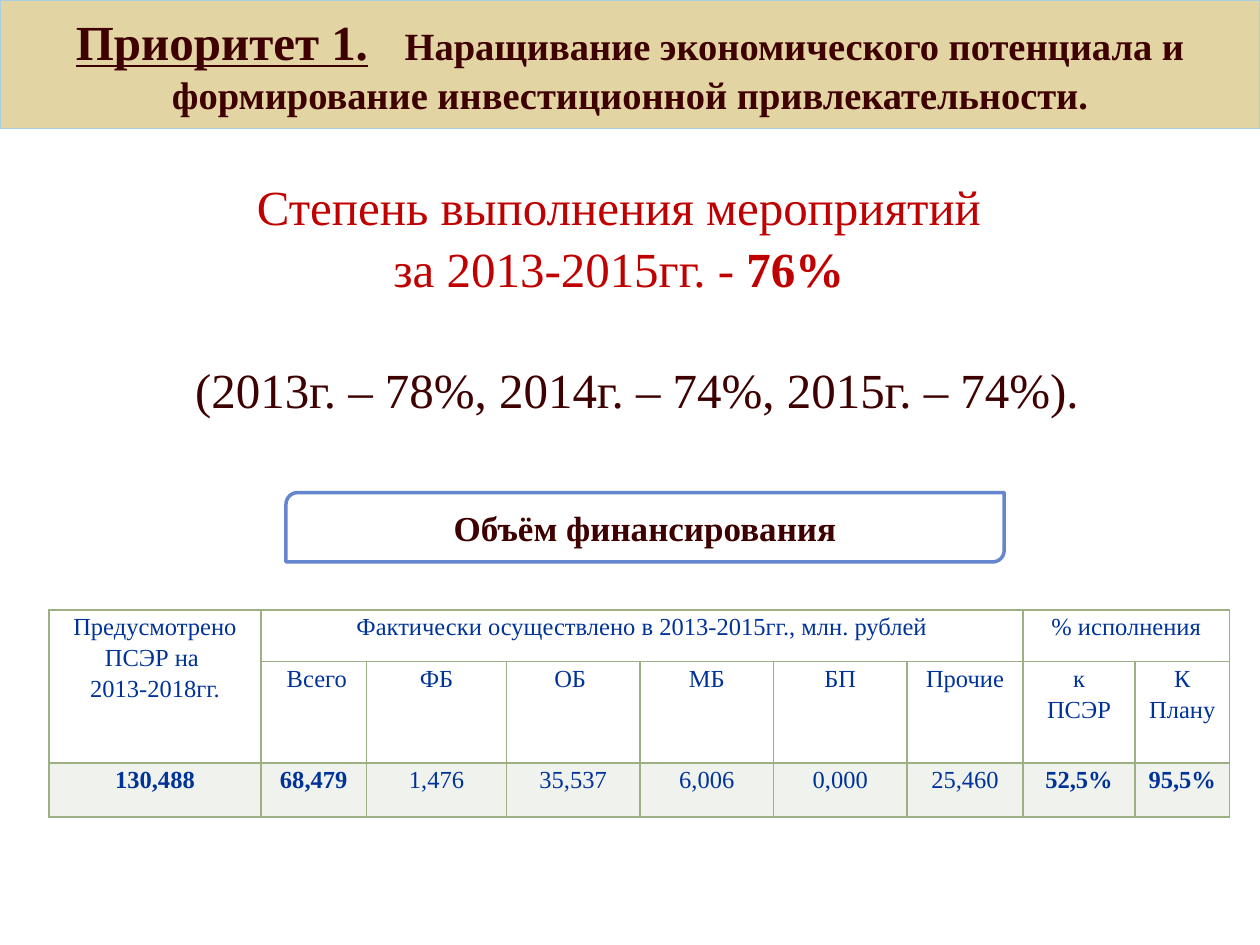
from lxml import etree
from pptx import Presentation
from pptx.dml.color import RGBColor
from pptx.enum.shapes import MSO_SHAPE
from pptx.enum.text import MSO_ANCHOR, MSO_AUTO_SIZE, PP_ALIGN
from pptx.oxml.ns import qn
from pptx.util import Inches, Pt

CENTER = PP_ALIGN.CENTER
MIDDLE = MSO_ANCHOR.MIDDLE
NO_AUTOFIT = MSO_AUTO_SIZE.NONE
ROUND_DIAGONAL = MSO_SHAPE.ROUND_2_DIAG_RECTANGLE

FONT = "Times New Roman"
WHITE = RGBColor(0xFF, 0xFF, 0xFF)
SAND = RGBColor(0xE2, 0xD5, 0xA3)
PALE_BLUE = RGBColor(0xA6, 0xD0, 0xDF)
BROWN = RGBColor(0x3E, 0x00, 0x00)
RED = RGBColor(0xC0, 0x00, 0x00)
BLUE = RGBColor(0x65, 0x85, 0xCF)
NAVY = RGBColor(0x00, 0x33, 0x99)
PALE_GREEN = RGBColor(0xEF, 0xF2, 0xED)
GREEN = "9CB084"


def add_run(paragraph, text, size, color, bold=False, underline=False):
    paragraph.alignment = CENTER
    run = paragraph.add_run()
    run.text = text
    run.font.name = FONT
    run.font.size = Pt(size)
    run.font.color.rgb = color
    run.font.bold = bold
    run.font.underline = underline
    return run


def add_borders(cell):
    properties = cell._tc.get_or_add_tcPr()
    for position, side in enumerate(("a:lnL", "a:lnR", "a:lnT", "a:lnB")):
        line = etree.Element(qn(side), w=str(Pt(1)))
        fill = etree.SubElement(line, qn("a:solidFill"))
        etree.SubElement(fill, qn("a:srgbClr"), val=GREEN)
        properties.insert(position, line)


presentation = Presentation()
presentation.slide_width = Inches(10)
presentation.slide_height = Inches(7.5)
slide = presentation.slides.add_slide(presentation.slide_layouts[5])

# Title band
title = slide.shapes.title
title.left, title.top = 0, 0
title.width, title.height = presentation.slide_width, Inches(1.02)
title.fill.solid()
title.fill.fore_color.rgb = SAND
title.line.color.rgb = PALE_BLUE
title.line.width = Pt(0.75)
title.text_frame.auto_size = NO_AUTOFIT
title.text_frame.vertical_anchor = MIDDLE
paragraph = title.text_frame.paragraphs[0]
add_run(paragraph, "Приоритет 1.", 28, BROWN, True, True)
gap = add_run(paragraph, " ", 28, BROWN, True)
gap.font._element.set("spc", "1400")
add_run(paragraph, "Наращивание экономического потенциала и "
        "формирование инвестиционной привлекательности.", 22, BROWN, True)

# Degree of completion
completion = slide.shapes.add_textbox(
    Inches(0.31), Inches(1.33), Inches(9.3), Inches(1.99))
frame = completion.text_frame
frame.word_wrap = True
completion_lines = [
    [("Степень выполнения мероприятий ", RED, False)],
    [("за 2013-2015гг. - ", RED, False), ("76% ", RED, True)],
    [("(2013г. – 78%, 2014г. – 74%, 2015г. – 74%).", BROWN, False)],
]
for index, runs in enumerate(completion_lines):
    paragraph = frame.add_paragraph() if index else frame.paragraphs[0]
    paragraph.line_spacing = 1.05
    for text, color, bold in runs:
        add_run(paragraph, text, 28, color, bold)
paragraph.space_before = Pt(34)
paragraph._p.get_or_add_pPr().set("marL", str(Inches(0.19)))

# Funding heading
heading = slide.shapes.add_shape(
    ROUND_DIAGONAL, Inches(2.27), Inches(3.91), Inches(5.7), Inches(0.55))
heading.shadow.inherit = False
heading.fill.solid()
heading.fill.fore_color.rgb = WHITE
heading.line.color.rgb = BLUE
heading.line.width = Pt(2)
heading.text_frame.vertical_anchor = MIDDLE
add_run(heading.text_frame.paragraphs[0], "Объём финансирования", 20, BROWN, True)

# Funding table
column_widths = [1.68, 0.84, 1.11, 1.06, 1.06, 1.06, 0.92, 0.89, 0.75]
row_heights = [0.41, 0.74, 0.43]
table_rows = [
    ["Предусмотрено ПСЭР на \n2013-2018гг.",
     "Фактически осуществлено в 2013-2015гг., млн. рублей",
     "", "", "", "", "", "% исполнения", ""],
    ["", " Всего", "ФБ", "ОБ ", "МБ", "БП", "Прочие", "к\nПСЭР", "К Плану"],
    ["130,488", "68,479", "1,476", "35,537", "6,006", "0,000", "25,460",
     "52,5%", "95,5%"],
]
bold_columns = (0, 1, 7, 8)
last_row = len(row_heights) - 1

table = slide.shapes.add_table(
    len(row_heights), len(column_widths), Inches(0.39), Inches(4.84),
    Inches(sum(column_widths)), Inches(sum(row_heights))).table
for column, width in zip(table.columns, column_widths):
    column.width = Inches(width)
for row, height in zip(table.rows, row_heights):
    row.height = Inches(height)
for first, last in (((0, 0), (1, 0)), ((0, 1), (0, 6)), ((0, 7), (0, 8))):
    table.cell(*first).merge(table.cell(*last))

for row_index, texts in enumerate(table_rows):
    for column_index, text in enumerate(texts):
        cell = table.cell(row_index, column_index)
        cell.margin_left = cell.margin_right = Inches(0.07)
        cell.margin_top = cell.margin_bottom = 0
        cell.fill.solid()
        cell.fill.fore_color.rgb = PALE_GREEN if row_index == last_row else WHITE
        add_borders(cell)
        if cell.is_spanned:
            continue
        bold = row_index == last_row and column_index in bold_columns
        for index, line in enumerate(text.split("\n")):
            frame = cell.text_frame
            paragraph = frame.add_paragraph() if index else frame.paragraphs[0]
            paragraph.line_spacing = 1.15
            add_run(paragraph, line, 14, NAVY, bold)

presentation.save("out.pptx")
